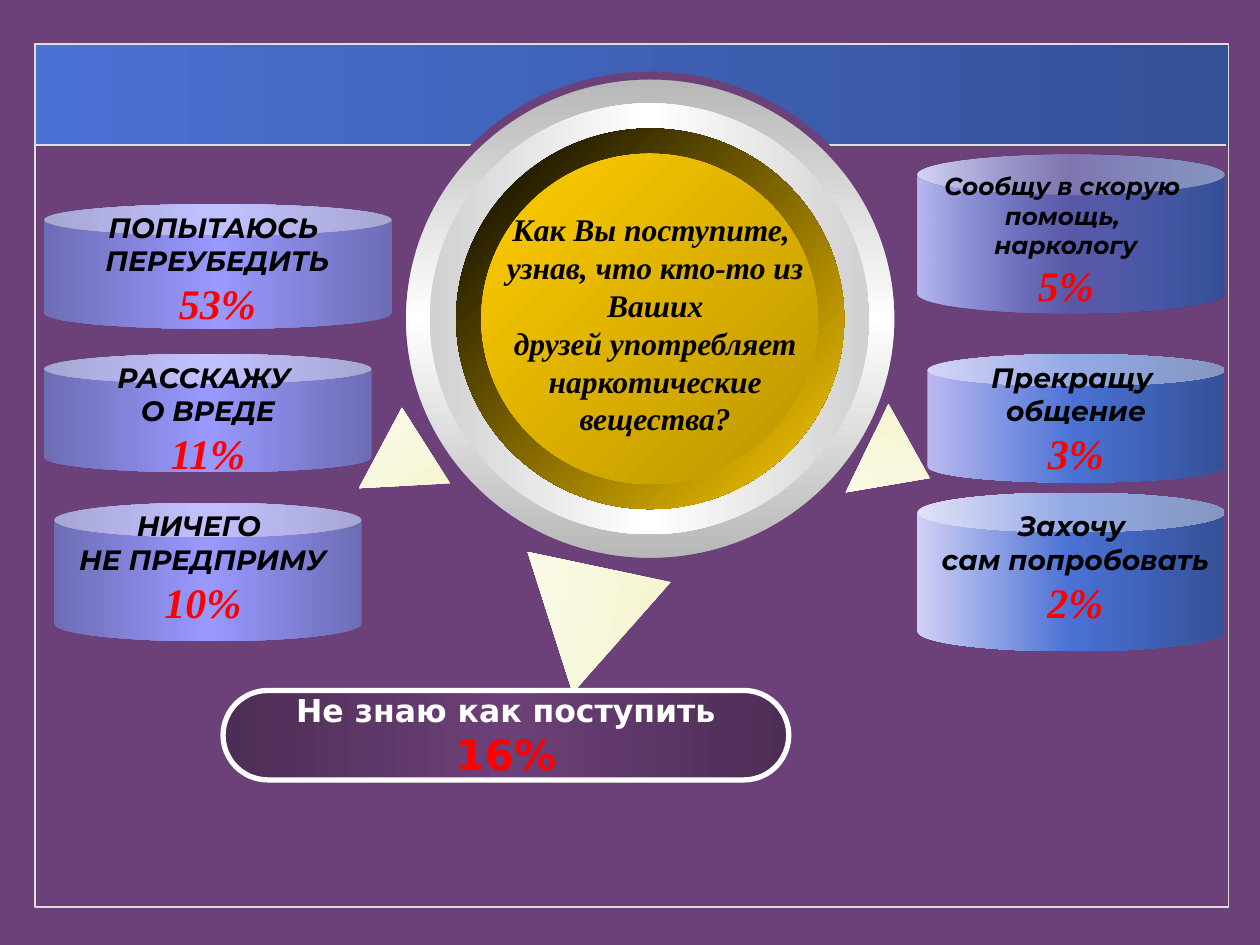
from dataclasses import dataclass

from lxml import etree
from pptx import Presentation
from pptx.dml.color import RGBColor
from pptx.enum.shapes import MSO_CONNECTOR, MSO_SHAPE
from pptx.enum.text import MSO_ANCHOR, MSO_AUTO_SIZE, PP_ALIGN
from pptx.oxml.ns import qn
from pptx.util import Inches, Pt

RECT, OVAL, CAN = MSO_SHAPE.RECTANGLE, MSO_SHAPE.OVAL, MSO_SHAPE.CAN
ARROW, PILL = MSO_SHAPE.UP_ARROW, MSO_SHAPE.ROUNDED_RECTANGLE
STRAIGHT = MSO_CONNECTOR.STRAIGHT
CENTER = PP_ALIGN.CENTER
MIDDLE = MSO_ANCHOR.MIDDLE
FIT = MSO_AUTO_SIZE.SHAPE_TO_FIT_TEXT

COLS, ROWS = 100, 75


@dataclass(frozen=True)
class Theme:
    """Gradient stops are (position, colour, shade, alpha), the last two optional percentages."""
    background: str = "6C4078"
    rule: str = "DDDDDD"
    white: str = "FFFFFF"
    text: str = "000000"
    accent: str = "FF0000"
    serif: str = "Times New Roman"
    sans: str = "Montserrat"
    pill_font: str = "DejaVu Sans"
    question_size: int = 18
    label_size: int = 16
    small_size: int = 14
    percent_size: int = 24
    banner: tuple = ((0, "4A71D4"), (100, "4A71D4", 46.28))
    arrow: tuple = ((0, "F4F4CC"), (100, "FBFBED"))
    steel: tuple = ((0, "FFFFFF", 46.28), (50, "FFFFFF"), (100, "FFFFFF", 46.28))
    silver: tuple = ((0, "FFFFFF", 63.53), (50, "FFFFFF"), (100, "FFFFFF", 63.53))
    gold_rim: tuple = ((0, "000000"), (100, "FFCC00"))
    gold: tuple = ((0, "FFCC00"), (100, "FFCC00", 49))
    violet: tuple = ((0, "9999FF", 46.28), (50, "9999FF"), (100, "9999FF", 46.28))
    blue: tuple = ((0, "B9B9F1"), (50, "4A71D4"), (100, "4A71D4", 46.28))
    pale_blue: tuple = ((0, "D0D0F5"), (50, "4A71D4"), (100, "4A71D4", 46.28))
    sheer_blue: tuple = ((0, "B9B9F1"), (50, "4A71D4", None, 51), (100, "4A71D4", 46.28))
    plum: tuple = ((0, "6C4078", 46.28), (50, "6C4078"), (100, "6C4078", 46.28))


class Board:
    """Draws on one slide; lengths are columns and rows of the grid."""

    def __init__(self, prs, theme):
        self.theme = theme
        self.cw, self.rh = prs.slide_width / COLS, prs.slide_height / ROWS
        self.s = prs.slides.add_slide(prs.slide_layouts[6])
        fill = self.s.background.fill
        fill.solid()
        fill.fore_color.rgb = RGBColor.from_string(theme.background)

    def place(self, x, y, w, h):
        return [round(v) for v in (x * self.cw, y * self.rh, w * self.cw, h * self.rh)]

    def gradient(self, sp, stops, angle):
        grad = etree.Element(qn("a:gradFill"), rotWithShape="1")
        gs_list = etree.SubElement(grad, qn("a:gsLst"))
        for pos, color, *mods in stops:
            gs = etree.SubElement(gs_list, qn("a:gs"), pos=str(pos * 1000))
            clr = etree.SubElement(gs, qn("a:srgbClr"), val=color)
            for tag, value in zip(("a:shade", "a:alpha"), mods):
                if value is not None:
                    etree.SubElement(clr, qn(tag), val=str(round(value * 1000)))
        etree.SubElement(grad, qn("a:lin"), ang=str(angle * 60000), scaled="0")
        sp._element.spPr.find(qn("a:prstGeom")).addnext(grad)

    def shape(self, kind, box, stops=None, angle=0, line=None, width=1, adj=(), rotation=0):
        sp = self.s.shapes.add_shape(kind, *self.place(*box))
        sp.shadow.inherit = False
        sp.rotation = rotation
        for i, value in enumerate(adj):
            sp.adjustments[i] = value
        if stops:
            self.gradient(sp, stops, angle)
        else:
            sp.fill.background()
        if line:
            sp.line.color.rgb = RGBColor.from_string(line)
            sp.line.width = Pt(width)
        else:
            sp.line.fill.background()
        return sp

    def rule(self, x1, y1, x2, y2):
        line = self.s.shapes.add_connector(STRAIGHT, *self.place(x1, y1, x2, y2))
        line.line.color.rgb = RGBColor.from_string(self.theme.rule)
        line.line.width = Pt(1)
        etree.SubElement(line._element.spPr, qn("a:effectLst"))

    def set_lines(self, tf, lines, font, size, color, italic):
        for i, line in enumerate(lines):
            p = tf.paragraphs[0] if i == 0 else tf.add_paragraph()
            p.text = line
            p.alignment = CENTER
            f = p.font
            f.name, f.size, f.bold, f.italic = font, Pt(size), True, italic
            f.color.rgb = RGBColor.from_string(color)

    def mark_percent(self, tf, font):
        """Set the last line in the large accent style; only the pill keeps it bold upright."""
        f = tf.paragraphs[-1].font
        f.name, f.size = font, Pt(self.theme.percent_size)
        f.color.rgb = RGBColor.from_string(self.theme.accent)

    def text(self, box, lines, font, size, wrap=True):
        tf = self.s.shapes.add_textbox(*self.place(*box)).text_frame
        tf.word_wrap = wrap
        tf.auto_size = FIT
        self.set_lines(tf, lines, font, size, self.theme.text, True)
        return tf

    def answer(self, can_box, stops, text_box, lines, size):
        """A can with its answer and percentage on top."""
        self.shape(CAN, can_box, stops, adj=[0.25])
        tf = self.text(text_box, lines, self.theme.sans, size, wrap=False)
        self.mark_percent(tf, self.theme.serif)

    def pill(self, box, lines):
        t = self.theme
        sp = self.shape(PILL, box, t.plum, line=t.white, width=3, adj=[0.5])
        tf = sp.text_frame
        tf.word_wrap = False
        tf.vertical_anchor = MIDDLE
        self.set_lines(tf, lines, t.pill_font, t.question_size, t.white, False)
        self.mark_percent(tf, t.pill_font)


def main():
    prs = Presentation()
    prs.slide_width, prs.slide_height = Inches(10), Inches(7.5)
    t = Theme()
    b = Board(prs, t)

    b.shape(RECT, (2.7, 3.4, 94.8, 8), t.banner)
    b.shape(RECT, (2.8, 3.5, 94.7, 68.5), line=t.rule)
    b.rule(2.7, 11.5, 97.3, 11.5)

    for box, rotation in [((27.6, 33.9, 7.1, 6.3), 237.5),
                          ((67.4, 34, 7.8, 5.5), 115.7),
                          ((40.7, 44.9, 11.6, 10.2), 191.9)]:
        b.shape(ARROW, box, t.arrow, adj=[0.52, 1], rotation=rotation)

    b.shape(OVAL, (31.9, 6, 39.4, 38.6), t.steel, 90, t.background, 4.5)
    for box, stops, angle in [((34.1, 8.2, 34.9, 34.2), t.silver, 0),
                              ((36.2, 10.2, 30.8, 30.2), t.gold_rim, 45),
                              ((38.2, 12.2, 26.7, 26.2), t.gold, 45)]:
        b.shape(OVAL, box, stops, angle)

    top, middle, bottom = 16.2, 28.1, 39.9
    big, small = t.label_size, t.small_size
    answers = [
        ((4.3, bottom, 24.4, 11), t.violet, (5, bottom, 22.2, 10.4),
         ["НИЧЕГО ", "НЕ ПРЕДПРИМУ", "10%"], big),
        ((3.5, middle, 26, 9.4), t.violet, (5.1, middle, 22.8, 10.4),
         ["РАССКАЖУ ", "О ВРЕДЕ", "11%"], big),
        ((3.5, top, 27.6, 9.9), t.violet, (6.9, top, 20.7, 10.4),
         ["ПОПЫТАЮСЬ ", "ПЕРЕУБЕДИТЬ", "53%"], big),
        ((72.8, 39.1, 24.4, 12.6), t.pale_blue, (73.6, bottom, 23.5, 10.4),
         ["Захочу ", "сам попробовать", "2%"], big),
        ((73.6, middle, 23.6, 10.2), t.blue, (77.6, middle, 15.6, 10.4),
         ["Прекращу ", "общение", "3%"], big),
        ((72.8, 12.3, 24.4, 12.6), t.sheer_blue, (73.6, 13.1, 22, 12.1),
         ["Сообщу в скорую ", "помощь, ", "наркологу", "5%"], small),
    ]
    for answer in answers:
        b.answer(*answer)

    b.text((38.2, 16.2, 27.6, 19.2),
           ["Как Вы поступите, ", "узнав, что кто-то из Ваших",
            " друзей употребляет ", "наркотические вещества?"],
           t.serif, t.question_size)
    b.pill((17.7, 54.8, 44.9, 7.1), ["Не знаю как поступить", "16%"])

    prs.save("out.pptx")


if __name__ == "__main__":
    main()
